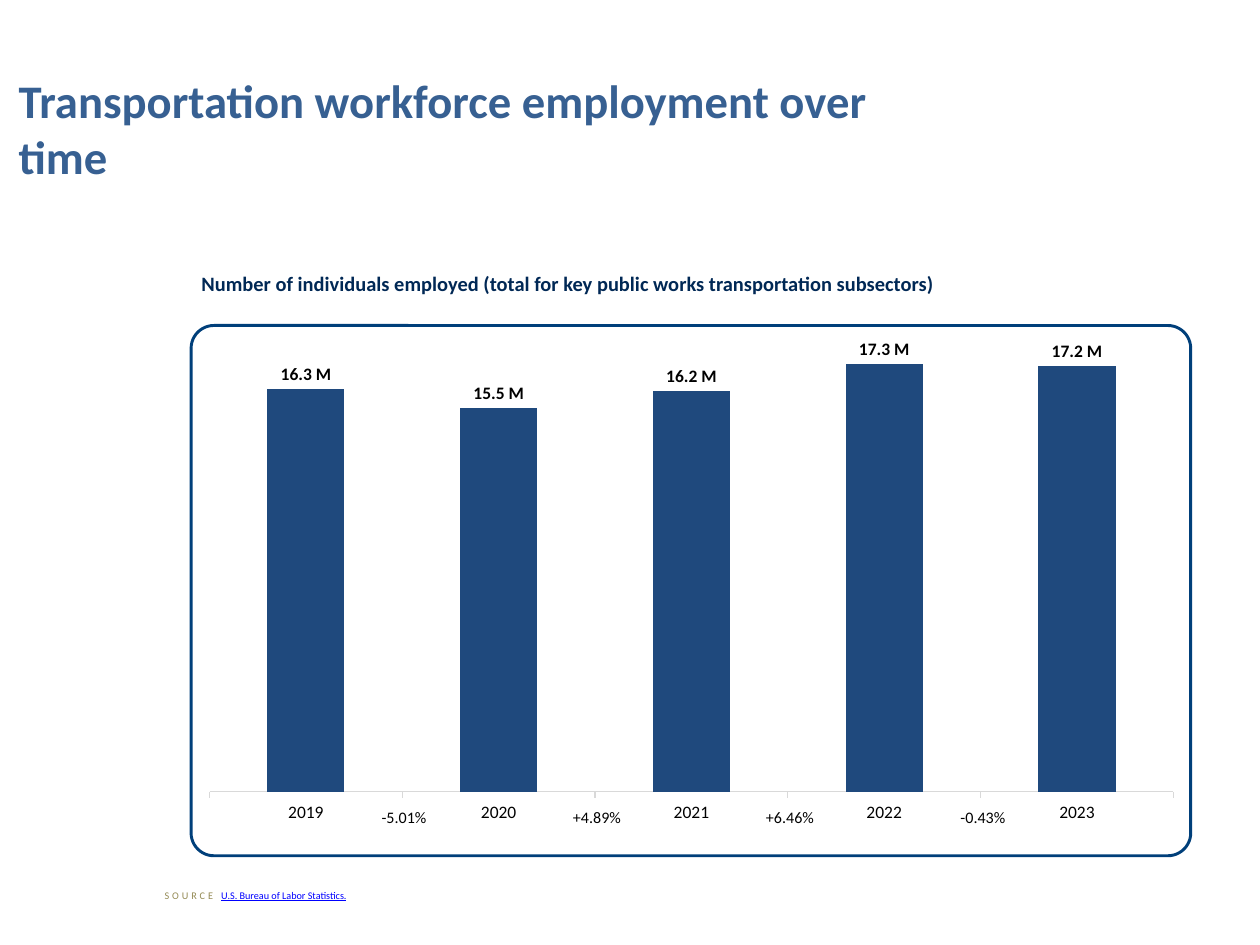
from dataclasses import dataclass

import lxml.etree
import pptx
import pptx.chart.data
import pptx.dml.color
import pptx.enum.chart
import pptx.enum.shapes
import pptx.enum.text
import pptx.oxml
import pptx.oxml.ns
import pptx.util

RGBColor = pptx.dml.color.RGBColor
TITLE_BLUE = RGBColor(0x37, 0x60, 0x92)
HEADING_NAVY = RGBColor(0x00, 0x28, 0x55)
FRAME_BLUE = RGBColor(0x00, 0x3F, 0x7A)
BAR_BLUE = RGBColor(0x1F, 0x49, 0x7D)
AXIS_GREY = RGBColor(0xD9, 0xD9, 0xD9)
SOURCE_OLIVE = RGBColor(0x94, 0x8A, 0x54)
LINK_BLUE = RGBColor(0x00, 0x00, 0xFF)
BLACK = RGBColor(0x00, 0x00, 0x00)

FONT = "Calibri"
SLIDE_WIDTH = pptx.util.Inches(12)
SLIDE_HEIGHT = pptx.util.Inches(9)
GRID_COLUMNS = 120
GRID_ROWS = 90
MILLIONS = '##0.0,,\\ "M"'
NO_TABLE_STYLE = "{2D5ABB26-0587-4C30-8999-92F81FD0307C}"

EMPLOYMENT = {
    "2019": 16300000,
    "2020": 15500000,
    "2021": 16200000,
    "2022": 17300000,
    "2023": 17200000,
}
CHANGES = ["-5.01%", "+4.89%", "+6.46%", "-0.43%"]


@dataclass(frozen=True)
class Area:
    column: float
    row: float
    columns: float
    rows: float

    def emu(self) -> tuple[int, int, int, int]:
        return (
            round(self.column * SLIDE_WIDTH / GRID_COLUMNS),
            round(self.row * SLIDE_HEIGHT / GRID_ROWS),
            round(self.columns * SLIDE_WIDTH / GRID_COLUMNS),
            round(self.rows * SLIDE_HEIGHT / GRID_ROWS),
        )


@dataclass(frozen=True)
class Label:
    text: str
    area: Area
    size: float
    color: RGBColor
    anchor: pptx.enum.text.MSO_ANCHOR = pptx.enum.text.MSO_ANCHOR.TOP
    line_spacing: float = 1.0


CHART_AREA = Area(19.9, 28.3, 91.9, 60.1)
FRAME_AREA = Area(18.2, 31, 95.2, 50.5)
SOURCE_AREA = Area(14.7, 84.2, 83.9, 2.2)
YEAR_COLUMNS = CHART_AREA.columns / len(EMPLOYMENT)
CHANGES_AREA = Area(
    CHART_AREA.column + YEAR_COLUMNS / 2 + 0.2, 76.5, YEAR_COLUMNS * len(CHANGES), 4.1
)

LABELS = [
    Label("Transportation workforce employment over time", Area(0.8, 3.2, 90, 18),
          32, TITLE_BLUE, pptx.enum.text.MSO_ANCHOR.MIDDLE),
    Label("Number of individuals employed (total for key public works transportation subsectors)",
          Area(18.2, 25.6, 80.3, 4.6), 14, HEADING_NAVY, line_spacing=0.9),
]


def set_font(font, size: float, color: RGBColor, bold: bool = False) -> None:
    font.name = FONT
    font.size = pptx.util.Pt(size)
    font.bold = bold
    font.color.rgb = color


def add_label(page, label: Label) -> None:
    frame = page.shapes.add_textbox(*label.area.emu()).text_frame
    frame.word_wrap = True
    frame.vertical_anchor = label.anchor
    para = frame.paragraphs[0]
    para.text = label.text
    para.line_spacing = label.line_spacing
    set_font(para.font, label.size, label.color, True)


def set_plot_height(chart, height: float) -> None:
    plot_area = chart._chartSpace.chart.plotArea
    for old_layout in plot_area.findall(pptx.oxml.ns.qn("c:layout")):
        plot_area.remove(old_layout)
    layout = lxml.etree.Element(pptx.oxml.ns.qn("c:layout"))
    manual = lxml.etree.SubElement(layout, pptx.oxml.ns.qn("c:manualLayout"))
    settings = {"layoutTarget": "inner", "xMode": "edge", "yMode": "edge",
                "x": 0, "y": 0, "w": 1, "h": height}
    for name, value in settings.items():
        lxml.etree.SubElement(manual, pptx.oxml.ns.qn(f"c:{name}"), val=str(value))
    plot_area.insert(0, layout)


def add_employment_chart(page) -> None:
    data = pptx.chart.data.CategoryChartData()
    data.categories = list(EMPLOYMENT)
    data.add_series("Series 1", list(EMPLOYMENT.values()))
    chart = page.shapes.add_chart(
        pptx.enum.chart.XL_CHART_TYPE.COLUMN_CLUSTERED, *CHART_AREA.emu(), data
    ).chart
    chart.has_legend = False
    chart.has_title = False
    set_font(chart.font, 10, BLACK)
    set_plot_height(chart, 0.784)

    years = chart.category_axis
    years.has_major_gridlines = False
    years.major_tick_mark = pptx.enum.chart.XL_TICK_MARK.OUTSIDE
    years.format.line.color.rgb = AXIS_GREY
    years.format.line.width = pptx.util.Pt(0.75)
    set_font(years.tick_labels.font, 12, BLACK)

    people = chart.value_axis
    people.minimum_scale = 0
    people.maximum_scale = 20000000
    people.has_major_gridlines = False
    people.visible = False

    plot = chart.plots[0]
    plot.gap_width = 150
    plot.vary_by_categories = False
    series = plot.series[0]
    series.format.fill.solid()
    series.format.fill.fore_color.rgb = BAR_BLUE
    labels = series.data_labels
    labels.show_value = True
    labels.number_format = MILLIONS
    labels.number_format_is_linked = False
    labels.position = pptx.enum.chart.XL_LABEL_POSITION.OUTSIDE_END
    set_font(labels.font, 12, BLACK, True)


def add_changes_table(page) -> None:
    table = page.shapes.add_table(1, len(CHANGES), *CHANGES_AREA.emu()).table
    table.first_row = False
    table.horz_banding = False
    table._tbl.tblPr.find(pptx.oxml.ns.qn("a:tableStyleId")).text = NO_TABLE_STYLE
    for cell, change in zip(table.rows[0].cells, CHANGES):
        cell.fill.background()
        para = cell.text_frame.paragraphs[0]
        para.text = change
        para.alignment = pptx.enum.text.PP_ALIGN.CENTER
        set_font(para.font, 11, BLACK)


def add_frame(page) -> None:
    frame = page.shapes.add_shape(
        pptx.enum.shapes.MSO_SHAPE.ROUNDED_RECTANGLE, *FRAME_AREA.emu()
    )
    frame.adjustments[0] = 0.043
    frame.shadow.inherit = False
    frame.fill.background()
    frame.line.color.rgb = FRAME_BLUE
    frame.line.width = pptx.util.Pt(2)


def add_source(page) -> None:
    frame = page.shapes.add_textbox(*SOURCE_AREA.emu()).text_frame
    frame.word_wrap = True
    frame.auto_size = pptx.enum.text.MSO_AUTO_SIZE.SHAPE_TO_FIT_TEXT
    para = frame.paragraphs[0]
    heading = para.add_run()
    heading.text = "SOURCE "
    set_font(heading.font, 7, SOURCE_OLIVE)
    heading._r.get_or_add_rPr().set("spc", "200")
    agency = para.add_run()
    agency.text = "U.S. Bureau of Labor Statistics."
    set_font(agency.font, 7, LINK_BLUE)
    agency.font.underline = True


def main() -> None:
    deck = pptx.Presentation()
    deck.slide_width = SLIDE_WIDTH
    deck.slide_height = SLIDE_HEIGHT
    page = deck.slides.add_slide(deck.slide_layouts[6])
    for label in LABELS:
        add_label(page, label)
    add_employment_chart(page)
    add_changes_table(page)
    add_frame(page)
    add_source(page)
    deck.save("out.pptx")


if __name__ == "__main__":
    main()
